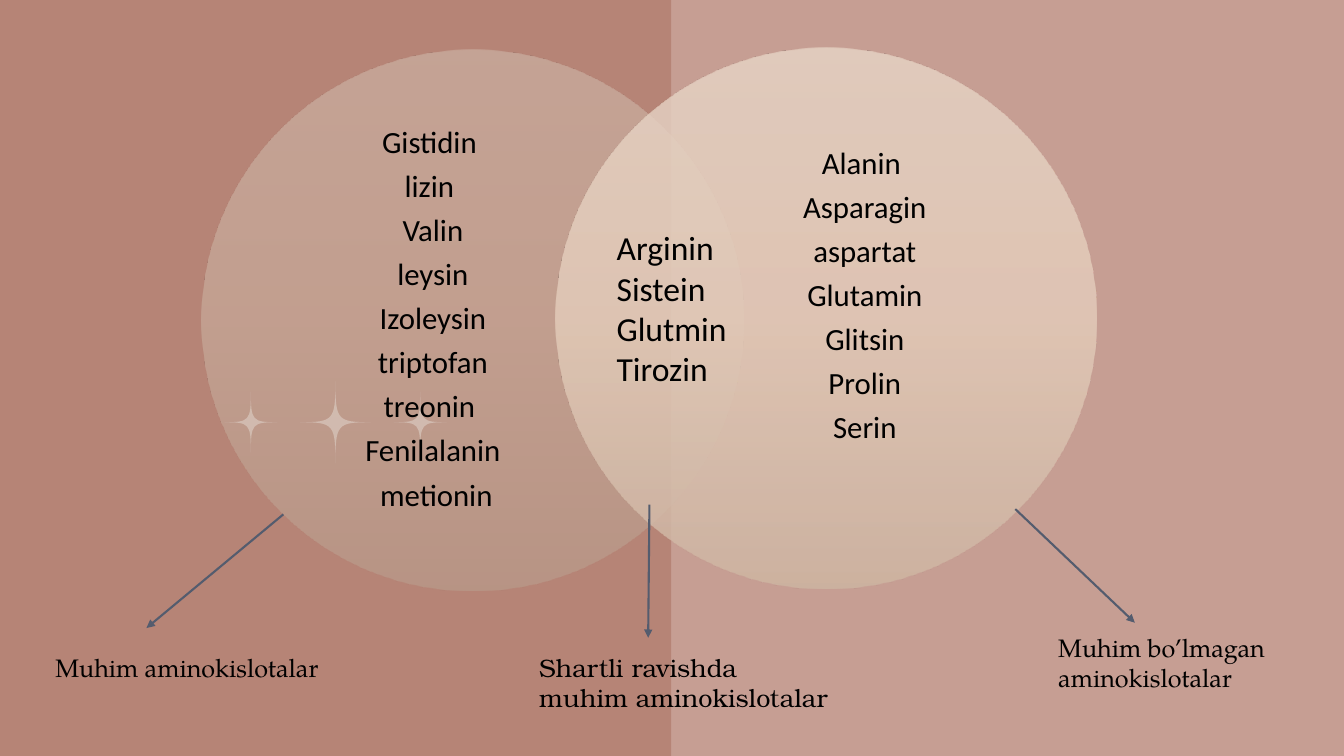
from lxml.etree import SubElement
from pptx import Presentation
from pptx.dml.color import RGBColor
from pptx.enum.shapes import MSO_CONNECTOR, MSO_SHAPE
from pptx.enum.text import MSO_ANCHOR, PP_ALIGN
from pptx.oxml.ns import qn
from pptx.util import Pt

COLORS = {
    "background": "C69E93", "panel": "A86B5B", "star": "DDC5BE",
    "arrow": "545C6E", "text": "000000",
}
ESSENTIAL = ["Gistidin ", "lizin ", "Valin", " leysin ", "Izoleysin", " triptofan ",
             "treonin ", "Fenilalanin", " metionin"]
NONESSENTIAL = ["Alanin ", "Asparagin", "aspartat", "Glutamin", "Glitsin",
                "Prolin", "Serin"]
CONDITIONAL = ["Arginin", "Sistein", "Glutmin", "Tirozin"]

# Circle left, top, gradient stops and opacity; list box left and top
SETS = [
    (ESSENTIAL, (144, 35.3), ("D4C3B5", "CFBAA9", "BAA594"), 50, (197.7, 80.5)),
    (NONESSENTIAL, (396.7, 33.9), ("E7D5C6", "E4CDBB", "CEB6A3"), 80, (506.2, 64)),
]
DIAMETER = 386.8
LIST_WIDTH, LIST_HEIGHT = 223, 296

# Star centre x, width and height
STAR_CENTER_Y = 301.6
STARS = [(239.6, 50.4, 58.4), (179.2, 37.6, 43.2), (300.2, 37.6, 43.2)]
STAR_WAIST = 0.05

# Caption, font, left, top, width; arrow start and end
CAPTIONS = [
    ("Muhim aminokislotalar", "TeX Gyre Pagella", (32.4, 462.2, 202.3),
     (202.4, 367.4), (104.6, 448.6)),
    ("Shartli ravishda muhim aminokislotalar", "TeX Gyre Bonum", (378, 462.2, 221.8),
     (463.9, 360.5), (463, 455.6)),
    ("Muhim bo’lmagan aminokislotalar", "TeX Gyre Pagella", (748.8, 448, 202.3),
     (725.2, 363.6), (810.6, 444.8)),
]
CAPTION_HEIGHT = 51


def set_alpha(color_element, percent):
    SubElement(color_element, qn("a:alpha"), val=str(percent * 1000))


def paint(shape, color):
    shape.shadow.inherit = False
    shape.line.fill.background()
    shape.fill.solid()
    shape.fill.fore_color.rgb = RGBColor.from_string(color)


def add_panel(slide):
    panel = slide.shapes.add_shape(MSO_SHAPE.RECTANGLE, 0, 0, Pt(479.5), Pt(540))
    paint(panel, COLORS["panel"])
    set_alpha(next(panel._element.spPr.iter(qn("a:srgbClr"))), 50)


def add_star(slide, center_x, width, height):
    """Four-pointed star whose sides are cubic curves bent towards the centre."""
    tips = [(Pt(center_x + x * width / 2), Pt(STAR_CENTER_Y + y * height / 2))
            for x, y in ((1, 0), (0, 1), (-1, 0), (0, -1))]
    builder = slide.shapes.build_freeform(*tips[0])
    builder.add_line_segments(tips[1:] + tips[:1], close=True)
    star = builder.convert_to_shape()
    paint(star, COLORS["star"])

    center = (star.width / 2, star.height / 2)
    outline = next(star._element.spPr.iter(qn("a:path")))
    corners = [(int(point.get("x")), int(point.get("y")))
               for point in outline.iter(qn("a:pt"))]
    sides = outline.findall(qn("a:lnTo"))
    for side, start, end in zip(sides, corners, corners[1:]):
        curve = SubElement(outline, qn("a:cubicBezTo"))
        for corner, reach in ((start, STAR_WAIST), (end, STAR_WAIST), (end, 1)):
            x, y = (round(c + reach * (tip - c)) for c, tip in zip(center, corner))
            SubElement(curve, qn("a:pt"), x=str(x), y=str(y))
        outline.replace(side, curve)


def add_circle(slide, left, top, stops, opacity):
    circle = slide.shapes.add_shape(MSO_SHAPE.OVAL, Pt(left), Pt(top),
                                    Pt(DIAMETER), Pt(DIAMETER))
    circle.shadow.inherit = False
    circle.line.fill.background()
    circle.fill.gradient()
    circle.fill.gradient_angle = 270
    stop_list = next(circle._element.spPr.iter(qn("a:gsLst")))
    for old_stop in list(stop_list):
        stop_list.remove(old_stop)
    for position, color in zip((0, 50, 100), stops):
        stop = SubElement(stop_list, qn("a:gs"), pos=str(position * 1000))
        set_alpha(SubElement(stop, qn("a:srgbClr"), val=color), opacity)


def add_text(slide, lines, left, top, width, height, size, font="Calibri"):
    frame = slide.shapes.add_textbox(Pt(left), Pt(top), Pt(width), Pt(height)).text_frame
    frame.word_wrap = True
    frame.text = "\n".join(lines)
    for paragraph in frame.paragraphs:
        for run in paragraph.runs:
            run.font.size = Pt(size)
            run.font.name = font
            run.font.color.rgb = RGBColor.from_string(COLORS["text"])
    return frame


def add_centered_list(slide, names, left, top):
    frame = add_text(slide, names, left, top, LIST_WIDTH, LIST_HEIGHT, 22)
    frame.margin_left = frame.margin_right = frame.margin_top = frame.margin_bottom = 0
    frame.vertical_anchor = MSO_ANCHOR.MIDDLE
    for paragraph in frame.paragraphs:
        paragraph.alignment = PP_ALIGN.CENTER
        paragraph.line_spacing = 0.9
        paragraph.space_after = Pt(7.7)


def add_arrow(slide, start, end):
    arrow = slide.shapes.add_connector(MSO_CONNECTOR.STRAIGHT,
                                       *(Pt(value) for value in start + end))
    arrow.line.width = Pt(1.5)
    arrow.line.color.rgb = RGBColor.from_string(COLORS["arrow"])
    SubElement(arrow.line._get_or_add_ln(), qn("a:tailEnd"), type="triangle")
    SubElement(arrow._element.spPr, qn("a:effectLst"))


def main():
    deck = Presentation()
    deck.slide_width, deck.slide_height = Pt(960), Pt(540)
    slide = deck.slides.add_slide(deck.slide_layouts[6])
    slide.background.fill.solid()
    slide.background.fill.fore_color.rgb = RGBColor.from_string(COLORS["background"])

    add_panel(slide)
    for star in STARS:
        add_star(slide, *star)
    for names, circle_corner, stops, opacity, list_corner in SETS:
        add_circle(slide, *circle_corner, stops, opacity)
        add_centered_list(slide, names, *list_corner)
    add_text(slide, CONDITIONAL, 433.4, 158.8, 103.7, 123.8, 24)
    for caption, font, (left, top, width), start, end in CAPTIONS:
        add_arrow(slide, start, end)
        add_text(slide, [caption], left, top, width, CAPTION_HEIGHT, 18, font)
    deck.save("out.pptx")


if __name__ == "__main__":
    main()
